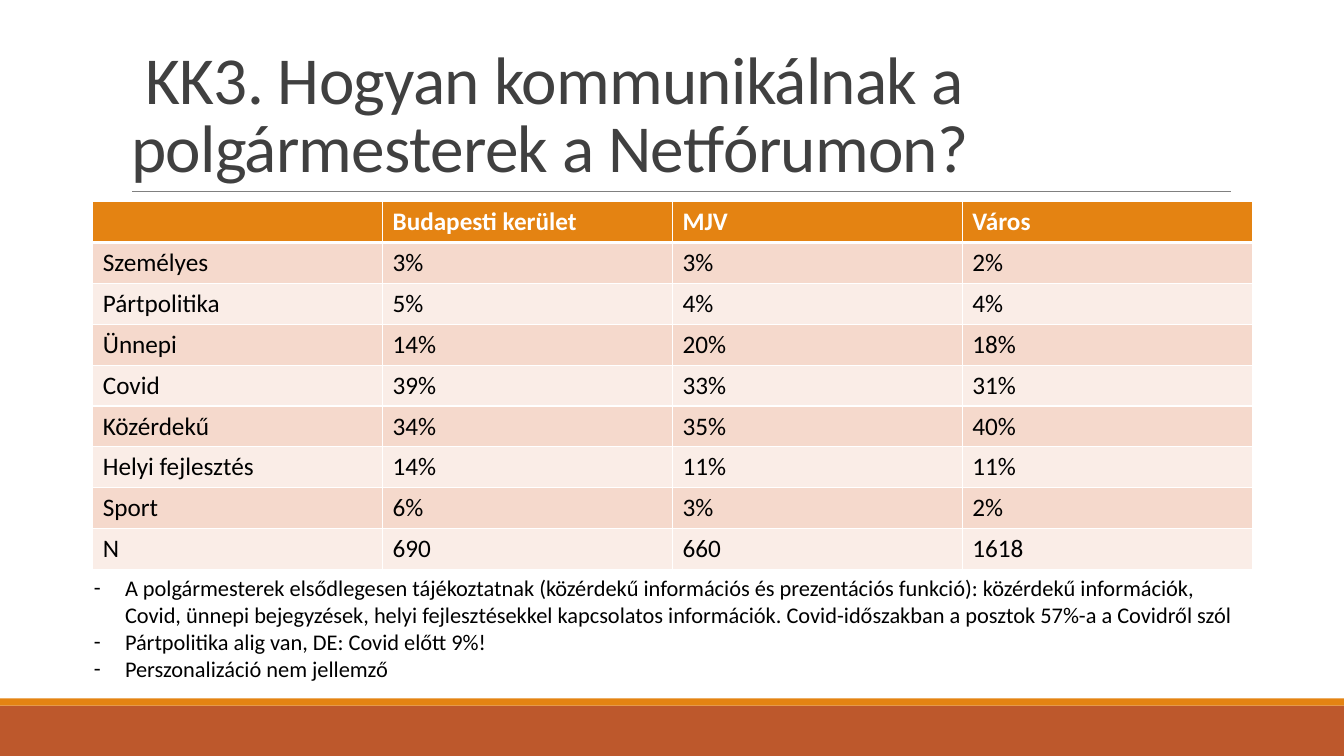
from lxml.etree import SubElement
from pptx import Presentation
from pptx.dml.color import RGBColor
from pptx.enum.shapes import MSO_CONNECTOR, MSO_SHAPE
from pptx.enum.text import MSO_ANCHOR, MSO_AUTO_SIZE, PP_ALIGN
from pptx.oxml import parse_xml
from pptx.oxml.ns import nsdecls, qn
from pptx.util import Inches, Pt


def tint(hue):
    return RGBColor.from_string(hue)


def style(para, size, hue, bold=False):
    font = para.font
    font.name, font.size, font.bold = "Calibri", Pt(size), bold
    font.color.rgb = tint(hue)


deck = Presentation()
deck.slide_width, deck.slide_height = Inches(13.33), Inches(7.5)
wide = deck.slide_width
slide = deck.slides.add_slide(deck.slide_layouts[1])
title, notes = slide.placeholders

# Footer bands
for top, high, hue in [(7, 0.5, "BD582C"), (6.93, 0.07, "E48312")]:
    band = slide.shapes.add_shape(
        MSO_SHAPE.RECTANGLE, 0, Inches(top), wide, Inches(high))
    band.shadow.inherit = False
    band.fill.solid()
    band.fill.fore_color.rgb = tint(hue)
    band.line.fill.background()

# Rule under the title
rule = slide.shapes.add_connector(
    MSO_CONNECTOR.STRAIGHT, Inches(1.31), Inches(1.9), Inches(12.21), Inches(1.9))
rule.line.color.rgb = tint("808080")
rule.line.width = Pt(0.5)
SubElement(rule._element.spPr, qn("a:effectLst"))

# Title
title.left, title.top = Inches(1.2), Inches(0.31)
title.width, title.height = Inches(11), Inches(1.59)
frame = title.text_frame
frame.text = " KK3. Hogyan kommunikálnak a polgármesterek a Netfórumon?"
frame.vertical_anchor = MSO_ANCHOR.BOTTOM
frame.auto_size = MSO_AUTO_SIZE.NONE
head = frame.paragraphs[0]
head.alignment = PP_ALIGN.LEFT
head.line_spacing = 0.85
style(head, 48, "404040")
head._p.pPr.find(qn("a:defRPr")).set("spc", "-50")

# Table of post topics
data = [
    ("", "Budapesti kerület", "MJV", "Város"),
    ("Személyes", "3%", "3%", "2%"),
    ("Pártpolitika", "5%", "4%", "4%"),
    ("Ünnepi", "14%", "20%", "18%"),
    ("Covid", "39%", "33%", "31%"),
    ("Közérdekű", "34%", "35%", "40%"),
    ("Helyi fejlesztés", "14%", "11%", "11%"),
    ("Sport", "6%", "3%", "2%"),
    ("N", "690", "660", "1618"),
]
table = slide.shapes.add_table(
    len(data), len(data[0]), Inches(0.92), Inches(2), Inches(11.5), Inches(3.65)).table
for r, row in enumerate(data):
    for c, word in enumerate(row):
        cell = table.cell(r, c)
        cell.text = word
        style(cell.text_frame.paragraphs[0], 18, "000000" if r else "FFFFFF", r == 0)
        cell.fill.solid()
        cell.fill.fore_color.rgb = tint(
            "E48312" if r == 0 else "F5D9CC" if r % 2 else "FAEDE7")
        # White borders, thicker below the header
        for i, side in enumerate("LRTB"):
            thick = 3 if (r, side) in [(0, "B"), (1, "T")] else 1
            edge = parse_xml(
                f'<a:ln{side} {nsdecls("a")} w="{Pt(thick)}"><a:solidFill>'
                f'<a:srgbClr val="FFFFFF"/></a:solidFill></a:ln{side}>')
            cell._tc.get_or_add_tcPr().insert(i, edge)

# Findings
notes.left, notes.top = Inches(0.83), Inches(5.65)
notes.width, notes.height = Inches(11.58), Inches(1.18)
frame = notes.text_frame
frame.text = "\n".join([
    "A polgármesterek elsődlegesen tájékoztatnak (közérdekű információs és "
    "prezentációs funkció): közérdekű információk, Covid, ünnepi bejegyzések, "
    "helyi fejlesztésekkel kapcsolatos információk. Covid-időszakban a posztok "
    "57%-a a Covidről szól",
    "Pártpolitika alig van, DE: Covid előtt 9%!",
    "Perszonalizáció nem jellemző",
])
frame.auto_size = MSO_AUTO_SIZE.NONE
frame.vertical_anchor = MSO_ANCHOR.TOP
for para in frame.paragraphs:
    para.space_before = Pt(0)
    props = para._p.get_or_add_pPr()
    props.set("marL", str(Inches(0.31)))
    props.set("indent", str(-Inches(0.31)))
    SubElement(props, qn("a:buFont")).set("typeface", "Calibri")
    SubElement(props, qn("a:buChar")).set("char", "-")
    style(para, 16, "000000")

deck.save("out.pptx")
